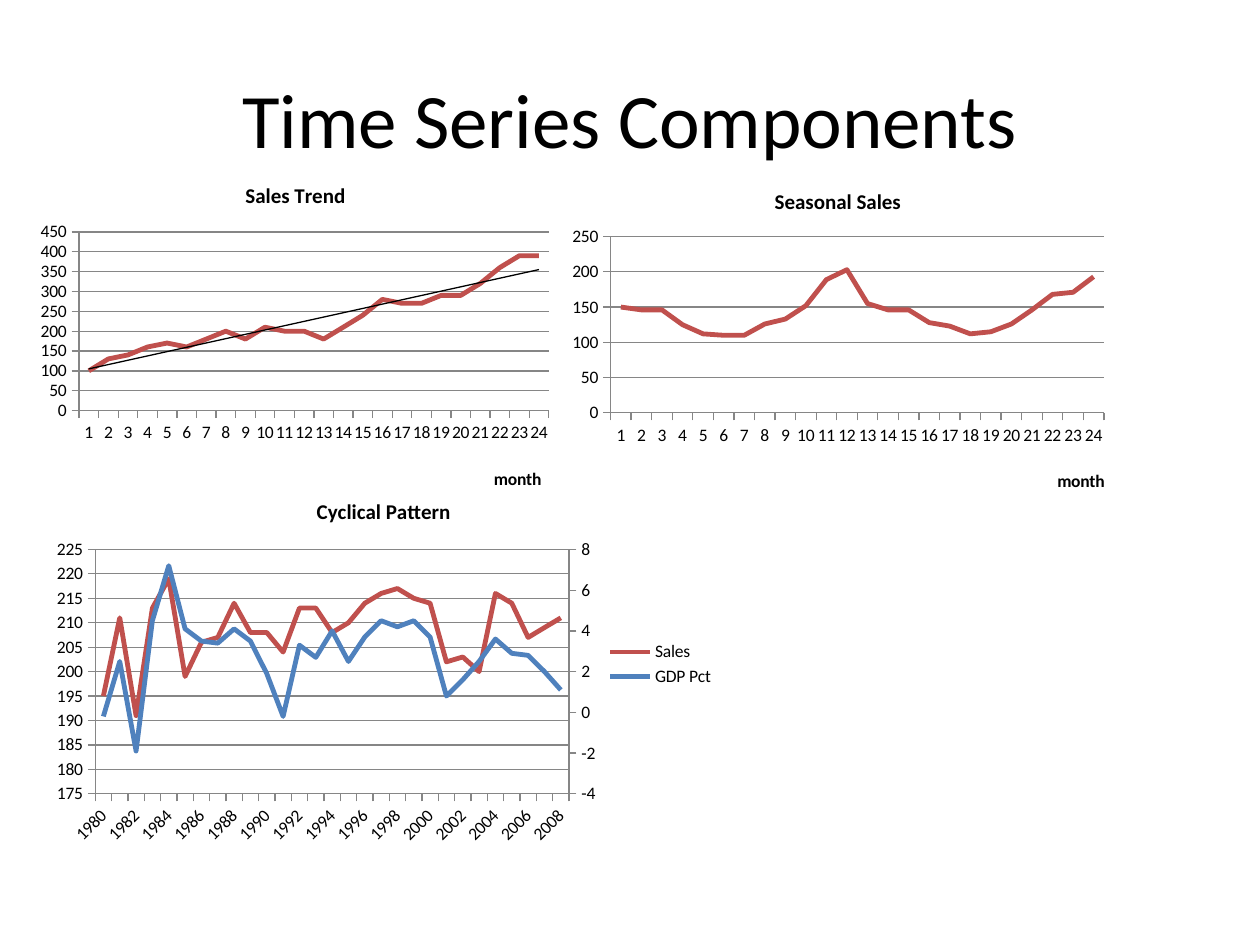
from copy import deepcopy
from dataclasses import dataclass

from lxml.etree import Element, SubElement
from pptx import Presentation
from pptx.chart.data import CategoryChartData
from pptx.dml.color import RGBColor
from pptx.enum.chart import XL_CHART_TYPE, XL_LEGEND_POSITION, XL_TICK_MARK
from pptx.enum.text import MSO_ANCHOR, PP_ALIGN
from pptx.oxml.ns import qn
from pptx.util import Inches, Pt


@dataclass(frozen=True)
class Theme:
    font: str = "Calibri"
    ink: RGBColor = RGBColor(0, 0, 0)
    axis: RGBColor = RGBColor(0x86, 0x86, 0x86)
    sales: RGBColor = RGBColor(0xC0, 0x50, 0x4D)
    gdp: RGBColor = RGBColor(0x4F, 0x81, 0xBD)
    title: Pt = Pt(44)
    chart_title: Pt = Pt(12)
    label: Pt = Pt(10)
    series_line: Pt = Pt(2.75)
    thin_line: Pt = Pt(0.75)


T = Theme()
W, H = Inches(10), Inches(7.5)

MONTHS = [str(m) for m in range(1, 25)]
YEARS = [str(y) for y in range(1980, 2009)]
TREND = [100, 130, 140, 160, 170, 160, 180, 200, 180, 210, 200, 200,
         180, 210, 240, 280, 270, 270, 290, 290, 320, 360, 390, 390]
SEASONAL = [150, 146, 146, 125, 112, 110, 110, 126, 133, 152, 189, 203,
            155, 146, 146, 128, 123, 112, 115, 126, 146, 168, 171, 193]
SALES = [195, 211, 191, 213, 219, 199, 206, 207, 214, 208, 208, 204, 213, 213, 208,
         210, 214, 216, 217, 215, 214, 202, 203, 200, 216, 214, 207, 209, 211]
GDP = [-0.2, 2.5, -1.9, 4.5, 7.2, 4.1, 3.5, 3.4, 4.1, 3.5, 1.9, -0.2, 3.3, 2.7, 4,
       2.5, 3.7, 4.5, 4.2, 4.5, 3.7, 0.8, 1.6, 2.5, 3.6, 2.9, 2.8, 2, 1.1]


def share(x, y, w, h):
    return round(W * x), round(H * y), round(W * w), round(H * h)


def set_font(font, size, bold=False):
    font.name, font.size, font.bold = T.font, size, bold
    font.color.rgb = T.ink


def set_line(line, color, width):
    line.color.rgb, line.width = color, width


def set_layout(parent, index, inner=False, **shares):
    for old in parent.findall(qn("c:layout")):
        parent.remove(old)
    layout = Element(qn("c:layout"))
    manual = SubElement(layout, qn("c:manualLayout"))
    if inner:
        SubElement(manual, qn("c:layoutTarget")).set("val", "inner")
    for key in ("x", "y"):
        SubElement(manual, qn(f"c:{key}Mode")).set("val", "edge")
    for key, value in shares.items():
        SubElement(manual, qn(f"c:{key}")).set("val", str(value))
    parent.insert(index, layout)


def set_heading(owner, text, size):
    owner.has_title = True
    title = owner.chart_title if hasattr(owner, "chart_title") else owner.axis_title
    title.text_frame.text = text
    set_font(title.text_frame.paragraphs[0].runs[0].font, size, True)
    return title


def add_line_chart(slide, box, title, cats, series, scale, plot):
    data = CategoryChartData(number_format="General")
    data.categories = cats
    for name, values, color in series:
        data.add_series(name, values)
    chart = slide.shapes.add_chart(XL_CHART_TYPE.LINE, *box, data).chart
    set_font(chart.font, T.label)
    set_heading(chart, title, T.chart_title)
    chart.has_legend = False
    chart.plots[0].vary_by_categories = False
    for s, (name, values, color) in zip(chart.plots[0].series, series):
        s.smooth = False
        set_line(s.format.line, color, T.series_line)
    for axis in (chart.category_axis, chart.value_axis):
        axis.major_tick_mark = XL_TICK_MARK.OUTSIDE
        axis.minor_tick_mark = XL_TICK_MARK.NONE
        set_line(axis.format.line, T.axis, T.thin_line)
        set_font(axis.tick_labels.font, T.label)
    val = chart.value_axis
    val.minimum_scale, val.maximum_scale, val.major_unit = scale
    val.has_major_gridlines = True
    set_line(val.major_gridlines.format.line, T.axis, T.thin_line)
    area = chart.plots[0]._element.getparent()
    set_layout(area, 0, True, **dict(zip("xywh", plot)))
    return chart


def add_trendline(series):
    line = Element(qn("c:trendline"))
    props = SubElement(line, qn("c:spPr"))
    ln = SubElement(props, qn("a:ln"), w=str(T.thin_line))
    fill = SubElement(ln, qn("a:solidFill"))
    SubElement(fill, qn("a:srgbClr"), val=str(T.ink))
    SubElement(line, qn("c:trendlineType")).set("val", "linear")
    for key in ("dispRSqr", "dispEq"):
        SubElement(line, qn(f"c:{key}")).set("val", "0")
    series._element.find(qn("c:cat")).addprevious(line)


def move_to_right_axis(chart, scale):
    def put(node, tag, value):
        node.find(".//" + qn(f"c:{tag}")).set("val", str(value))

    cat_id, val_id = "50010", "50020"
    first = chart.plots[0]._element
    second = deepcopy(first)
    first.remove(first.findall(qn("c:ser"))[1])
    second.remove(second.findall(qn("c:ser"))[0])
    for node, axis_id in zip(second.findall(qn("c:axId")), (cat_id, val_id)):
        node.set("val", axis_id)
    first.addnext(second)

    left = chart.value_axis._element
    cat, right = deepcopy(chart.category_axis._element), deepcopy(left)
    right.remove(right.find(qn("c:majorGridlines")))
    for node, own, other in ((cat, cat_id, val_id), (right, val_id, cat_id)):
        put(node, "axId", own)
        put(node, "crossAx", other)
    put(cat, "delete", 1)
    put(right, "axPos", "r")
    put(right, "crosses", "max")
    for tag, value in zip(("min", "max", "majorUnit"), scale):
        put(right, tag, value)
    left.addnext(right)
    right.addnext(cat)


def add_title(slide, box, text):
    sp = slide.shapes.title
    sp.left, sp.top, sp.width, sp.height = box
    tf = sp.text_frame
    tf.text = text
    tf.vertical_anchor = MSO_ANCHOR.MIDDLE
    p = tf.paragraphs[0]
    p.alignment = PP_ALIGN.CENTER
    set_font(p.runs[0].font, T.title)


def add_monthly(slide, box, title, values, scale, month_x):
    chart = add_line_chart(slide, box, title, MONTHS, [("Series 1", values, T.sales)],
                           scale, (0.09, 0.2, 0.89, 0.53))
    heading = set_heading(chart.category_axis, "month", T.label)
    set_layout(heading._element, 1, x=month_x, y=0.89)
    return chart


def add_cyclical(slide, box):
    series = [("Sales", SALES, T.sales), ("GDP Pct", GDP, T.gdp)]
    chart = add_line_chart(slide, box, "Cyclical Pattern", YEARS, series,
                           (175, 225, 5), (0.08, 0.19, 0.69, 0.66))
    cat = chart.category_axis._element
    cat.find(qn("c:txPr")).find(qn("a:bodyPr")).set("rot", "-2700000")
    skip = Element(qn("c:tickLblSkip"))
    skip.set("val", "2")
    cat.find(qn("c:noMultiLvlLbl")).addprevious(skip)
    move_to_right_axis(chart, (-4, 8, 2))
    chart.has_legend = True
    chart.legend.position = XL_LEGEND_POSITION.RIGHT
    chart.legend.include_in_layout = False
    set_font(chart.legend.font, T.label)


def main():
    prs = Presentation()
    prs.slide_width, prs.slide_height = W, H
    slide = prs.slides.add_slide(prs.slide_layouts[5])
    add_title(slide, share(0.05, 0.04, 0.9, 0.17), "Time Series Components")
    trend = add_monthly(slide, share(0.025, 0.174, 0.419, 0.357), "Sales Trend",
                        TREND, (0, 450, 50), 0.87)
    add_trendline(trend.plots[0].series[0])
    add_monthly(slide, share(0.445, 0.18, 0.44, 0.352), "Seasonal Sales",
                SEASONAL, (0, 250, 50), 0.89)
    add_cyclical(slide, share(0.032, 0.507, 0.545, 0.392))
    prs.save("out.pptx")


if __name__ == "__main__":
    main()
